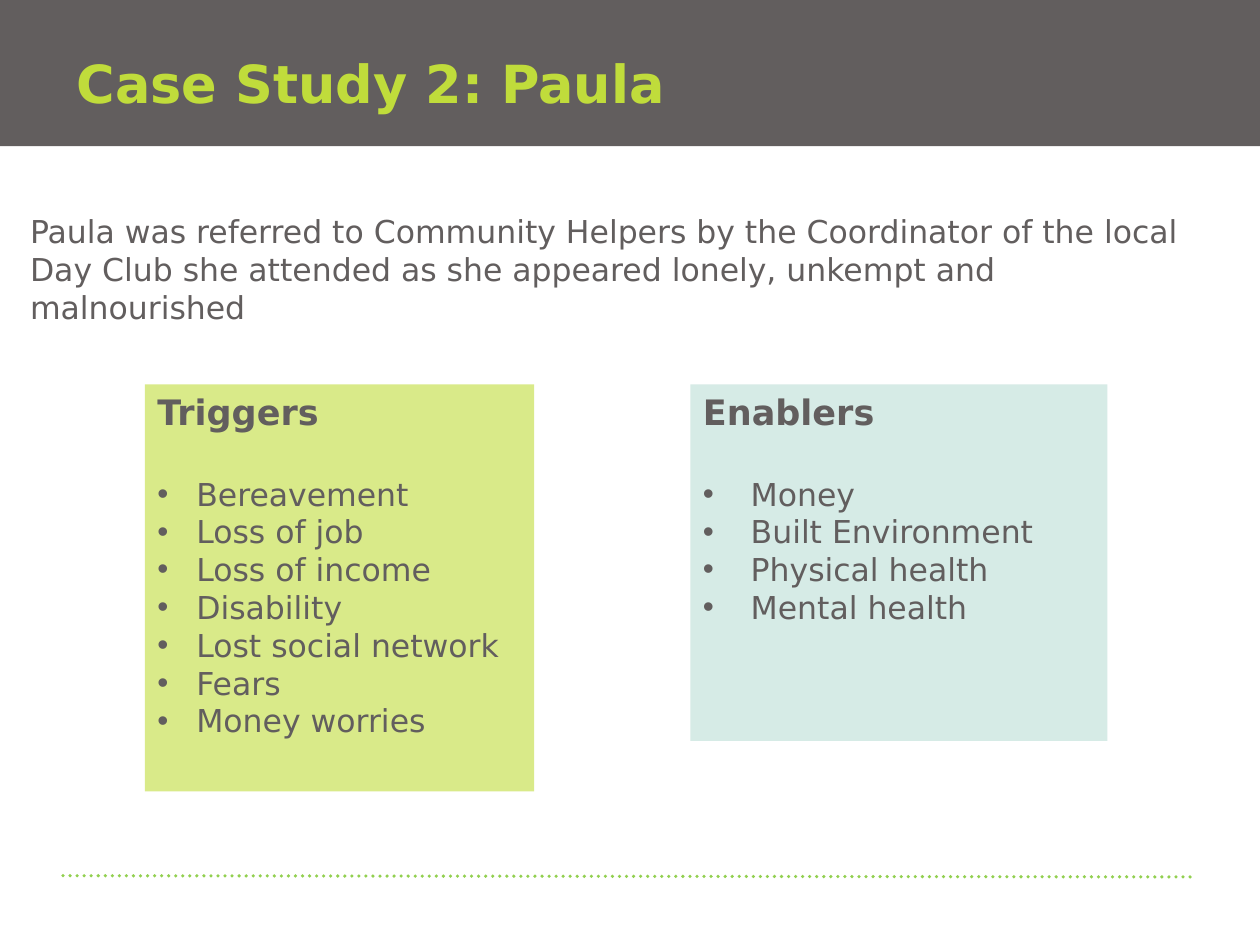
"""Build the case study slide with its triggers and enablers panels."""
from lxml.etree import SubElement
from pptx import Presentation
from pptx.dml.color import RGBColor
from pptx.enum.dml import MSO_LINE
from pptx.enum.shapes import MSO_CONNECTOR, MSO_SHAPE
from pptx.enum.text import MSO_ANCHOR as Anchor, PP_ALIGN as Align
from pptx.oxml.ns import qn
from pptx.util import Inches, Pt

COLORS = {"slate": "625E5E", "lime": "C0DC3B", "pale_lime": "D9EA89",
          "mint": "D6EBE6", "green": "92D050"}
FONT = "DejaVu Sans"

deck = Presentation()
deck.slide_width, deck.slide_height = Inches(10), Inches(7.5)
column, row = deck.slide_width / 100, deck.slide_height / 100
page = deck.slides.add_slide(deck.slide_layouts[6])


def add_box(left, top, width, height, fill=None, anchor=Anchor.TOP):
    area = int(left * column), int(top * row), int(width * column), int(height * row)
    if fill:
        box = page.shapes.add_shape(MSO_SHAPE.RECTANGLE, *area)
        box.shadow.inherit = False
        box.fill.solid()
        box.fill.fore_color.rgb = RGBColor.from_string(COLORS[fill])
        box.line.fill.background()
    else:
        box = page.shapes.add_textbox(*area)
    box.text_frame.word_wrap = True
    box.text_frame.vertical_anchor = anchor
    return box


def write(para, text, size, color="slate", bold=False):
    para.text = text
    para.alignment = Align.LEFT
    font = para.runs[0].font
    font.name, font.size, font.bold = FONT, Pt(size), bold
    font.color.rgb = RGBColor.from_string(COLORS[color])


add_box(0, 0, 100, 15.47, "slate")

rule = page.shapes.add_connector(
    MSO_CONNECTOR.STRAIGHT, int(5 * column), int(92.67 * row),
    int(95 * column), int(92.8 * row))
rule.line.color.rgb = RGBColor.from_string(COLORS["green"])
rule.line.width = Pt(2)
rule.line.dash_style = MSO_LINE.ROUND_DOT
outline = rule.line._get_or_add_ln()
outline.set("cap", "rnd")
SubElement(outline.getparent(), qn("a:effectLst"))

title = add_box(5.1, -0.93, 115, 19.33, anchor=Anchor.MIDDLE)
write(title.text_frame.paragraphs[0], "Case Study 2: Paula", 30, "lime", True)

panels = [
    ("Triggers", 11.5, 30.9, 43.07, "pale_lime", 0.31,
     ["Bereavement", "Loss of job", "Loss of income", "Disability",
      "Lost social network", "Fears", "Money worries"]),
    ("Enablers", 54.8, 33.1, 37.73, "mint", 0.38,
     ["Money", "Built Environment", "Physical health", "Mental health"]),
]
for heading, left, width, height, fill, indent, items in panels:
    frame = add_box(left, 40.67, width, height, fill).text_frame
    write(frame.paragraphs[0], heading, 20, bold=True)
    frame.paragraphs[0].space_after = Pt(24)
    for item in items:
        para = frame.add_paragraph()
        write(para, item, 18)
        properties = para._p.get_or_add_pPr()
        properties.set("marL", str(Inches(indent)))
        properties.set("indent", str(-Inches(indent)))
        SubElement(properties, qn("a:buFont"), typeface="Arial")
        SubElement(properties, qn("a:buChar"), char="•")

summary = add_box(1.4, 21.8, 95.3, 13.47)
write(summary.text_frame.paragraphs[0],
      "Paula was referred to Community Helpers by the Coordinator of the local "
      "Day Club she attended as she appeared lonely, unkempt and malnourished", 18)

deck.save("out.pptx")
